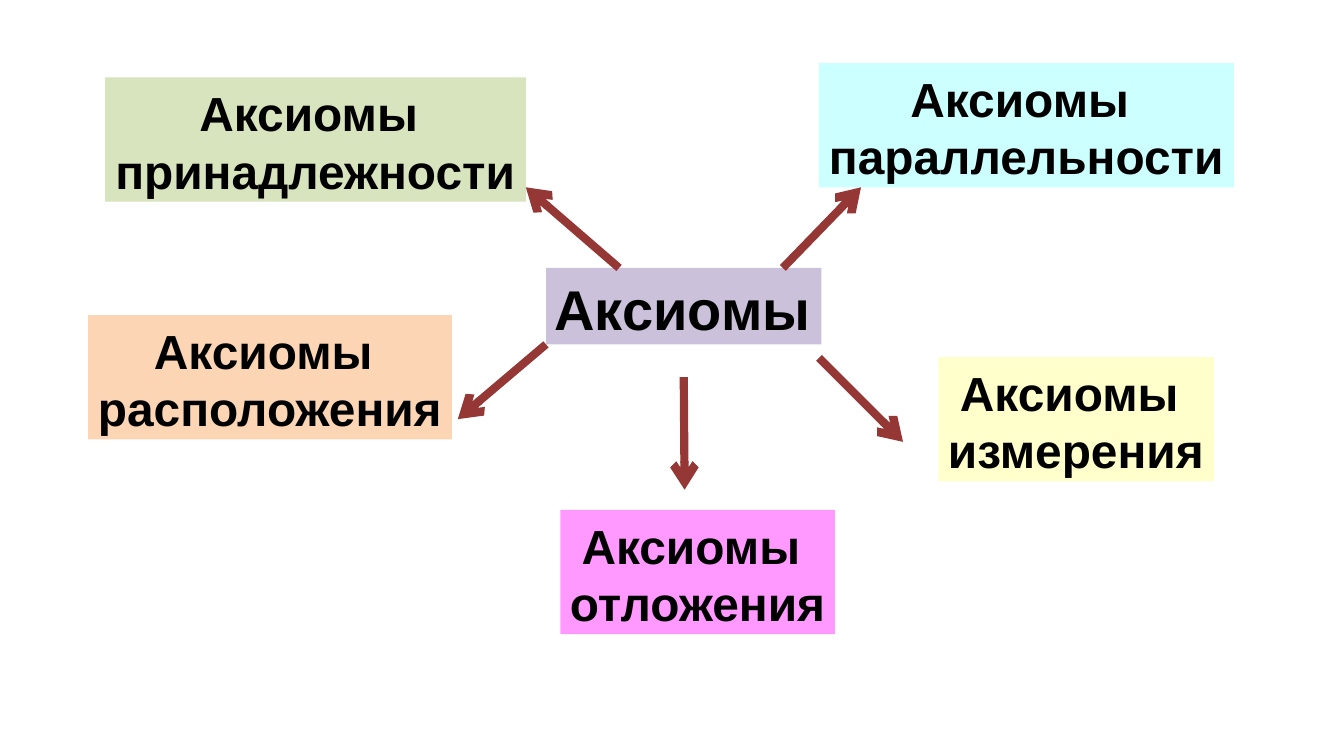
from lxml import etree
from pptx import Presentation
from pptx import util as u
from pptx.dml.color import RGBColor
from pptx.enum import shapes, text
from pptx.oxml.ns import qn

prs = Presentation()
prs.slide_width, prs.slide_height = u.Inches(16), u.Inches(9)
s = prs.slides.add_slide(prs.slide_layouts[6])


def color(value):
    return RGBColor.from_string(value)


# Boxes: lines of text, left, top, width, height, fill, text size
PAIR_H = 1.48
boxes = [
    ("Аксиомы", 6.5, 3.19, 3.28, 0.91, "CCC1DA", 48),
    ("Аксиомы \nпринадлежности", 1.25, 0.92, 5.01, PAIR_H, "D7E4BD", 41),
    ("Аксиомы \nрасположения", 1.05, 3.75, 4.33, PAIR_H, "FCD5B5", 41),
    ("Аксиомы \nизмерения", 11.17, 4.25, 3.28, PAIR_H, "FFFFCC", 41),
    ("Аксиомы \nотложения", 6.67, 6.07, 3.27, PAIR_H, "FF99FF", 41),
    ("Аксиомы \nпараллельности", 9.75, 0.75, 4.94, PAIR_H, "CCFFFF", 41),
]
for words, left, top, width, height, fill, size in boxes:
    sp = s.shapes.add_textbox(*(u.Inches(v) for v in (left, top, width, height)))
    sp.fill.solid()
    sp.fill.fore_color.rgb = color(fill)
    tf = sp.text_frame
    tf.text = words
    tf.word_wrap = False
    tf.auto_size = text.MSO_AUTO_SIZE.SHAPE_TO_FIT_TEXT
    tf.margin_top = tf.margin_bottom = u.Inches(0.08)
    for p in tf.paragraphs:
        # Only the two-line boxes are centred
        p.alignment = text.PP_ALIGN.CENTER if "\n" in words else text.PP_ALIGN.LEFT
        for r in p.runs:
            r.font.name = "Arial"
            r.font.size = u.Pt(size)
            r.font.bold = True
            r.font.color.rgb = color("000000")

# Arrows from the central box: start x, start y, end x, end y
arrows = [
    (6.5, 4.1, 5.45, 4.99),
    (9.32, 3.19, 10.25, 2.23),
    (9.75, 4.26, 10.75, 5.26),
    (8.14, 4.49, 8.15, 5.83),
    (7.37, 3.19, 6.26, 2.23),
]
for ends in arrows:
    c = s.shapes.add_connector(shapes.MSO_CONNECTOR.STRAIGHT, *(u.Inches(v) for v in ends))
    c.line.color.rgb = color("953735")
    c.line.width = u.Pt(7)
    etree.SubElement(c.line._get_or_add_ln(), qn("a:tailEnd"), type="arrow")
    etree.SubElement(c._element.spPr, qn("a:effectLst"))

prs.save("out.pptx")
